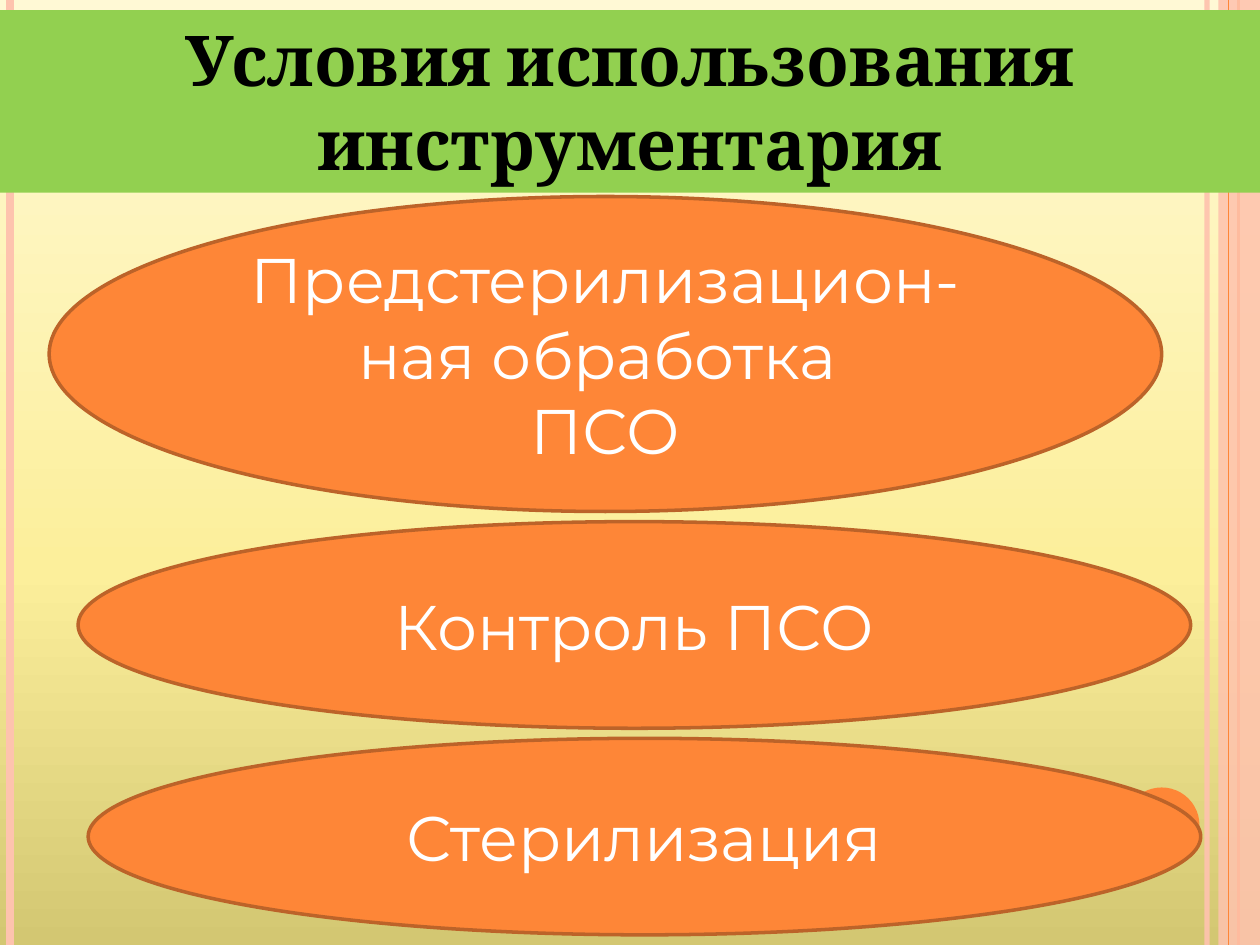
from copy import deepcopy

from lxml import etree
from pptx import Presentation
from pptx.dml.color import RGBColor
from pptx.enum.shapes import MSO_CONNECTOR, MSO_SHAPE
from pptx.enum.text import MSO_ANCHOR, MSO_AUTO_SIZE, PP_ALIGN
from pptx.oxml.ns import qn
from pptx.util import Inches, Pt

ORANGE = RGBColor(0xFE, 0x86, 0x37)
BROWN = RGBColor(0xBC, 0x63, 0x29)
PINK = RGBColor(0xFE, 0xC3, 0xAE)
GREEN = RGBColor(0x92, 0xD0, 0x50)
BLACK = RGBColor(0x00, 0x00, 0x00)
WHITE = RGBColor(0xFF, 0xFF, 0xFF)
BACKGROUND_STOPS = [
    (0, RGBColor(0xD3, 0xC7, 0x72)),
    (0.4, RGBColor(0xFC, 0xEF, 0x9B)),
    (1, RGBColor(0xFF, 0xF9, 0xD5)),
]
WIDTH, HEIGHT = 10, 7.5


def set_opacity(shape, percent):
    """Make the first solid colour of a shape or line partly transparent."""
    color = shape.element.spPr.find(".//" + qn("a:srgbClr"))
    etree.SubElement(color, qn("a:alpha"), val=str(percent * 1000))


class SlideBuilder:
    title_font, step_font = "Cambria", "Montserrat"
    title_size, step_size = Pt(40), Pt(36)

    def __init__(self, slide):
        self.slide = slide

    def background(self, stops):
        """Fill the background with a gradient that runs from bottom to top."""
        fill = self.slide.background.fill
        fill.gradient()
        fill.gradient_angle = 90
        first = self.slide.element.find(".//" + qn("a:gs"))
        first.addnext(deepcopy(first))
        for stop, (position, color) in zip(fill.gradient_stops, stops):
            stop.position = position
            stop.color.rgb = color

    def stripe(self, x, color, weight):
        """Draw a vertical line over the whole slide height."""
        line = self.slide.shapes.add_connector(
            MSO_CONNECTOR.STRAIGHT, Inches(x), 0, Inches(x), Inches(HEIGHT))
        line.line.color.rgb = color
        line.line.width = Pt(weight)
        etree.SubElement(line.element.spPr, qn("a:effectLst"))
        return line

    def shape(self, kind, box, fill, outline=None):
        shape = self.slide.shapes.add_shape(kind, *map(Inches, box))
        shape.shadow.inherit = False
        shape.fill.solid()
        shape.fill.fore_color.rgb = fill
        if outline is None:
            shape.line.fill.background()
        else:
            shape.line.color.rgb = outline
            shape.line.width = Pt(2)
        return shape

    def text(self, shape, paragraphs, font, size, color, bold=False):
        frame = shape.text_frame
        frame.word_wrap = True
        for index, content in enumerate(paragraphs):
            paragraph = frame.add_paragraph() if index else frame.paragraphs[0]
            paragraph.alignment = PP_ALIGN.CENTER
            run = paragraph.add_run()
            run.text = content
            run.font.name = font
            run.font.size = size
            run.font.bold = bold
            run.font.color.rgb = color

    def title(self, content, box):
        banner = self.shape(MSO_SHAPE.RECTANGLE, box, GREEN)
        banner.text_frame.vertical_anchor = MSO_ANCHOR.TOP
        banner.text_frame.auto_size = MSO_AUTO_SIZE.SHAPE_TO_FIT_TEXT
        self.text(banner, [content], self.title_font, self.title_size, BLACK, bold=True)

    def step(self, paragraphs, left, top, height):
        oval = self.shape(MSO_SHAPE.OVAL, (left, top, 8.83, height), ORANGE, BROWN)
        oval.text_frame.vertical_anchor = MSO_ANCHOR.MIDDLE
        self.text(oval, paragraphs, self.step_font, self.step_size, WHITE)


def main():
    presentation = Presentation()
    presentation.slide_width = Inches(WIDTH)
    presentation.slide_height = Inches(HEIGHT)
    builder = SlideBuilder(presentation.slides.add_slide(presentation.slide_layouts[6]))

    builder.background(BACKGROUND_STOPS)
    set_opacity(builder.stripe(9.58, PINK, 3), 93)
    builder.stripe(0.08, PINK, 4.5)
    builder.stripe(9.83, ORANGE, 1.5)
    set_opacity(builder.shape(MSO_SHAPE.RECTANGLE, (9.67, 0, 0.33, HEIGHT), PINK), 87)
    builder.stripe(9.75, ORANGE, 0.75)
    builder.shape(MSO_SHAPE.OVAL, (8.92, 6.25, 0.6, 0.6), ORANGE)

    builder.title("Условия использования инструментария", (0, 0.08, WIDTH, 1.45))
    builder.step(["Предстерилизацион-ная обработка ", "ПСО"], 0.39, 1.56, 2.5)
    builder.step(["Стерилизация"], 0.7, 5.86, 1.56)
    builder.step(["Контроль ПСО"], 0.62, 4.14, 1.64)

    presentation.save("out.pptx")


if __name__ == "__main__":
    main()
